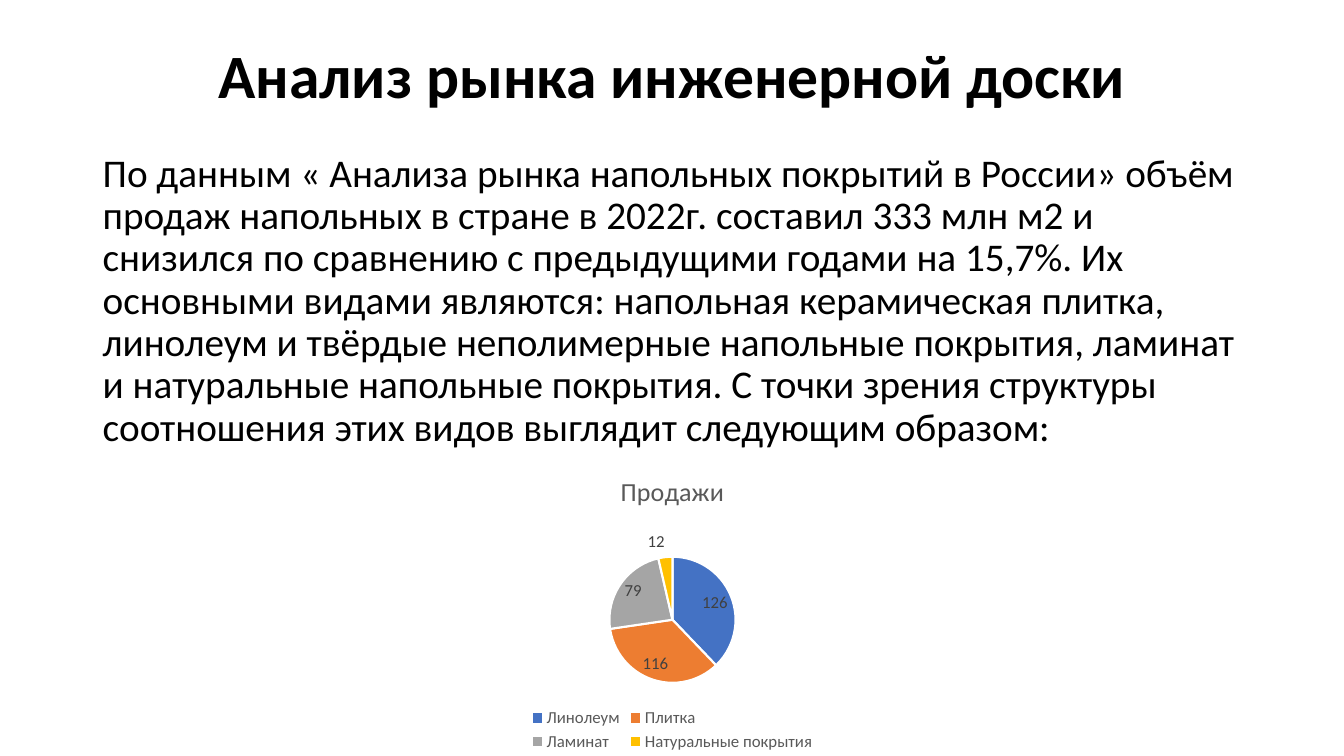
from pptx import Presentation
from pptx.chart.data import CategoryChartData
from pptx.dml.color import RGBColor
from pptx.enum.chart import XL_CHART_TYPE as ChartType
from pptx.enum.chart import XL_LABEL_POSITION as LabelPos
from pptx.enum.chart import XL_LEGEND_POSITION as LegendPos
from pptx.enum.text import MSO_ANCHOR, MSO_AUTO_SIZE, PP_ALIGN
from pptx.util import Inches, Pt

TITLE = "Анализ рынка инженерной доски"
MARKET_SUMMARY = (
    "По данным « Анализа рынка напольных покрытий в России» объём продаж "
    "напольных в стране в 2022г. составил 333 млн м2 и снизился по сравнению "
    "с предыдущими годами на 15,7%. Их основными видами являются: напольная "
    "керамическая плитка, линолеум и твёрдые неполимерные напольные покрытия, "
    "ламинат и натуральные напольные покрытия. С точки зрения структуры "
    "соотношения этих видов выглядит следующим образом:"
)
SALES = [
    ("Линолеум", 126, "4472C4"),
    ("Плитка", 116, "ED7D31"),
    ("Ламинат", 79, "A5A5A5"),
    ("Натуральные покрытия", 12, "FFC000"),
]


def rgb(color):
    return RGBColor.from_string(color)


class SlideBuilder:
    font_name = "Calibri"
    ink = "000000"
    muted = "595959"
    label_ink = "404040"

    def __init__(self, slide):
        self.slide = slide

    def style_font(self, font, size, color, bold=False):
        font.name = self.font_name
        font.size = Pt(size)
        font.bold = bold
        font.color.rgb = rgb(color)

    def set_text(self, frame, text, size=28, color=ink, bold=False,
                 align=PP_ALIGN.LEFT, anchor=MSO_ANCHOR.TOP, line_spacing=0.9,
                 space_before=0):
        frame.word_wrap = True
        frame.auto_size = MSO_AUTO_SIZE.NONE
        frame.vertical_anchor = anchor
        paragraph = frame.paragraphs[0]
        paragraph.alignment = align
        paragraph.line_spacing = line_spacing
        paragraph.space_before = Pt(space_before)
        run = paragraph.add_run()
        run.text = text
        self.style_font(run.font, size, color, bold)

    def title(self, text, left, top, width, height):
        heading = self.slide.shapes.title
        heading.left, heading.top = Inches(left), Inches(top)
        heading.width, heading.height = Inches(width), Inches(height)
        self.set_text(heading.text_frame, text, size=44, bold=True,
                      align=PP_ALIGN.CENTER, anchor=MSO_ANCHOR.MIDDLE)

    def body(self, text, left, top, width, height):
        box = self.slide.shapes.add_textbox(
            Inches(left), Inches(top), Inches(width), Inches(height))
        self.set_text(box.text_frame, text, space_before=10)

    def pie(self, name, slices, left, top, width, height):
        """Add a pie chart from (category, value, colour) slices."""
        categories, values, colors = zip(*slices)
        data = CategoryChartData()
        data.categories = categories
        data.add_series(name, values)
        chart = self.slide.shapes.add_chart(
            ChartType.PIE, Inches(left), Inches(top), Inches(width),
            Inches(height), data).chart
        self.style_font(chart.font, 10, self.ink)

        chart.has_title = True
        self.set_text(chart.chart_title.text_frame, name, size=18.6,
                      color=self.muted, align=PP_ALIGN.CENTER, line_spacing=1)

        chart.has_legend = True
        chart.legend.position = LegendPos.BOTTOM
        chart.legend.include_in_layout = False
        self.style_font(chart.legend.font, 12, self.muted)

        plot = chart.plots[0]
        plot.vary_by_categories = True
        sales = plot.series[0]
        for index, color in enumerate(colors):
            style = sales.points[index].format
            style.fill.solid()
            style.fill.fore_color.rgb = rgb(color)
            style.line.color.rgb = rgb("FFFFFF")
            style.line.width = Pt(1.5)

        labels = sales.data_labels
        labels.show_value = True
        labels.position = LabelPos.BEST_FIT
        self.style_font(labels.font, 12, self.label_ink)


def main():
    deck = Presentation()
    deck.slide_width, deck.slide_height = Inches(13.33), Inches(7.5)
    title_only = deck.slide_layouts[5]
    builder = SlideBuilder(deck.slides.add_slide(title_only))
    builder.title(TITLE, 0.92, 0.4, 11.5, 0.76)
    builder.body(MARKET_SUMMARY, 0.92, 1.47, 11.5, 5.48)
    builder.pie("Продажи", SALES, 4.13, 4.54, 5.08, 2.96)
    deck.save("out.pptx")


if __name__ == "__main__":
    main()
